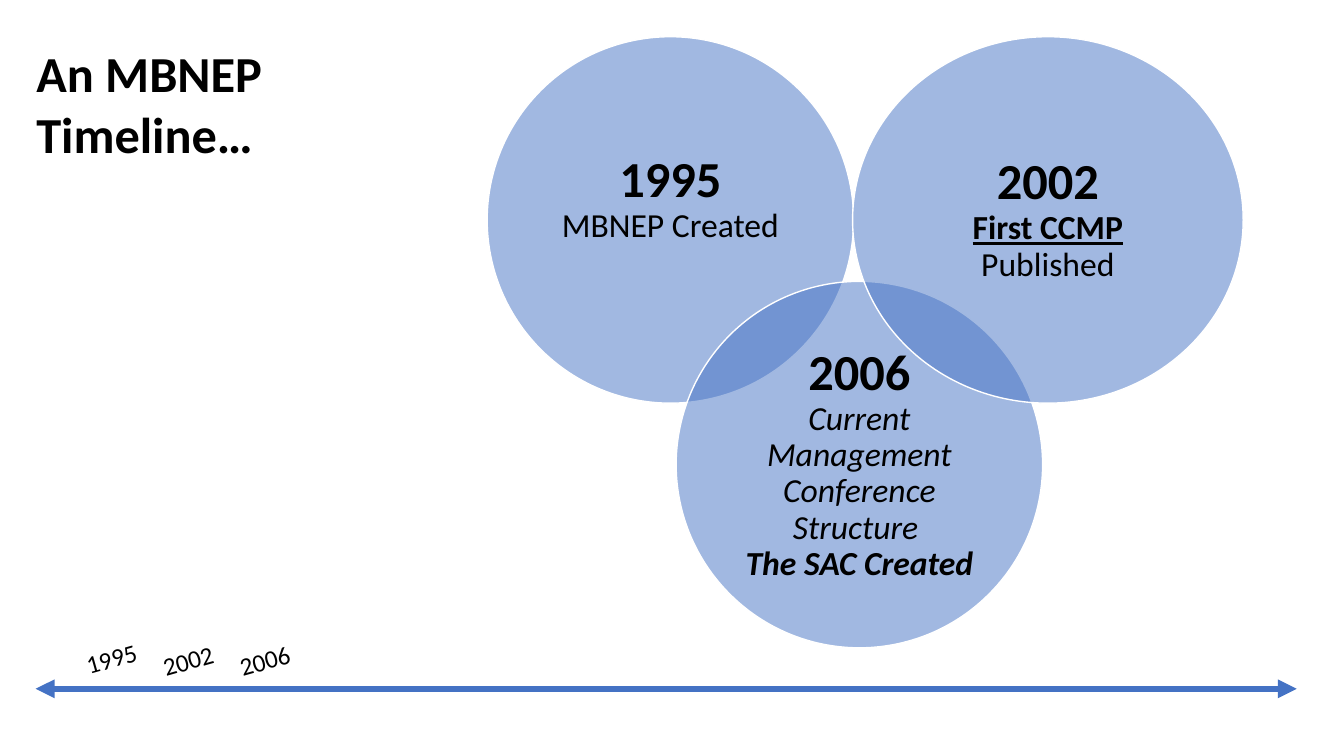
import pptx
import pptx.util
import pptx.dml.color
import pptx.enum.shapes
import pptx.enum.text
import pptx.oxml
import pptx.oxml.ns

SCALE = 9525  # EMU in one px, 96 px to the inch
FONT = "Calibri"
COLORS = {"blue": "4472C4", "white": "FFFFFF", "black": "000000"}
ALIGN = pptx.enum.text.PP_ALIGN
MIDDLE = pptx.enum.text.MSO_ANCHOR.MIDDLE

# Left, top, width, height, bottom inset, then lines of (text, size, styles)
EVENTS = [
    ((464, 35, 349, 349), 53, [
        ("1995", 36, "b"), ("MBNEP Created", 24, "")]),
    ((644, 268, 349, 349), 14, [
        ("2006", 36, "b"),
        ("Current Management Conference Structure ", 24, "i"),
        ("The SAC Created", 24, "bi")]),
    ((812, 35, 372, 349), 14, [
        ("2002", 36, "b"), ("First CCMP", 24, "bu"), ("Published", 24, "")]),
]
YEARS = [("1995", 606), ("2002", 608), ("2006", 608)]


def px(n):
    return pptx.util.Emu(n * SCALE)


def rgb(name):
    return pptx.dml.color.RGBColor.from_string(COLORS[name])


def style(run, size, marks=""):
    font = run.font
    font.name = FONT
    font.size = pptx.util.Pt(size)
    font.color.rgb = rgb("black")
    font.bold = "b" in marks
    font.italic = "i" in marks
    font.underline = "u" in marks


def add_node(parent, tag, **attrs):
    node = pptx.oxml.parse_xml(
        f"<a:{tag} {pptx.oxml.ns.nsdecls('a')}/>")
    for key, value in attrs.items():
        node.set(key, value)
    parent.append(node)


def add_title(slide, text, box):
    title = slide.shapes.title
    title.left, title.top, title.width, title.height = map(px, box)
    frame = title.text_frame
    frame.text = text
    frame.word_wrap = True
    frame.auto_size = pptx.enum.text.MSO_AUTO_SIZE.NONE
    frame.vertical_anchor = MIDDLE
    para = frame.paragraphs[0]
    para.alignment = ALIGN.LEFT
    para.line_spacing = 1.0
    style(para.runs[0], 36, "b")


def add_event(slide, box, bottom, lines):
    oval = slide.shapes.add_shape(
        pptx.enum.shapes.MSO_SHAPE.OVAL, *map(px, box))
    oval.shadow.inherit = False
    oval.fill.solid()
    oval.fill.fore_color.rgb = rgb("blue")
    tint = oval.fill._xPr.find(".//" + pptx.oxml.ns.qn("a:srgbClr"))
    add_node(tint, "alpha", val="50000")
    oval.line.color.rgb = rgb("white")
    oval.line.width = pptx.util.Pt(1)

    frame = oval.text_frame
    frame.word_wrap = True
    frame.vertical_anchor = MIDDLE
    frame.margin_left = frame.margin_right = frame.margin_top = px(14)
    frame.margin_bottom = px(bottom)
    para = frame.paragraphs[0]
    para.text = "\v".join(text for text, _, _ in lines)
    para.alignment = ALIGN.CENTER
    para.line_spacing = 0.9
    for run, (_, size, marks) in zip(para.runs, lines):
        style(run, size, marks)


def add_axis(slide, left, right, y):
    axis = slide.shapes.add_connector(
        pptx.enum.shapes.MSO_CONNECTOR.STRAIGHT,
        px(left), px(y), px(right), px(y))
    axis.line.color.rgb = rgb("blue")
    axis.line.width = pptx.util.Pt(4.5)
    for end in ("headEnd", "tailEnd"):
        add_node(axis.line._get_or_add_ln(), end, type="triangle")
    add_node(axis._element.spPr, "effectLst")


def add_year(slide, text, left, top):
    label = slide.shapes.add_textbox(px(left), px(top), px(78), px(38))
    label.rotation = -15.8
    label.text_frame.word_wrap = True
    label.text_frame.text = text
    style(label.text_frame.paragraphs[0].runs[0], 18)


def main():
    deck = pptx.Presentation()
    deck.slide_width, deck.slide_height = px(1280), px(720)
    slide = deck.slides.add_slide(deck.slide_layouts.get_by_name("Title Only"))

    add_title(slide, "An MBNEP Timeline…", (25, 35, 279, 126))

    # Overlapping circles
    for box, bottom, lines in EVENTS:
        add_event(slide, box, bottom, lines)

    # Time axis with its years
    add_axis(slide, 34, 1235, 656)
    for i, (year, top) in enumerate(YEARS):
        add_year(slide, year, 72 + 73 * i, top)

    deck.save("out.pptx")


if __name__ == "__main__":
    main()
